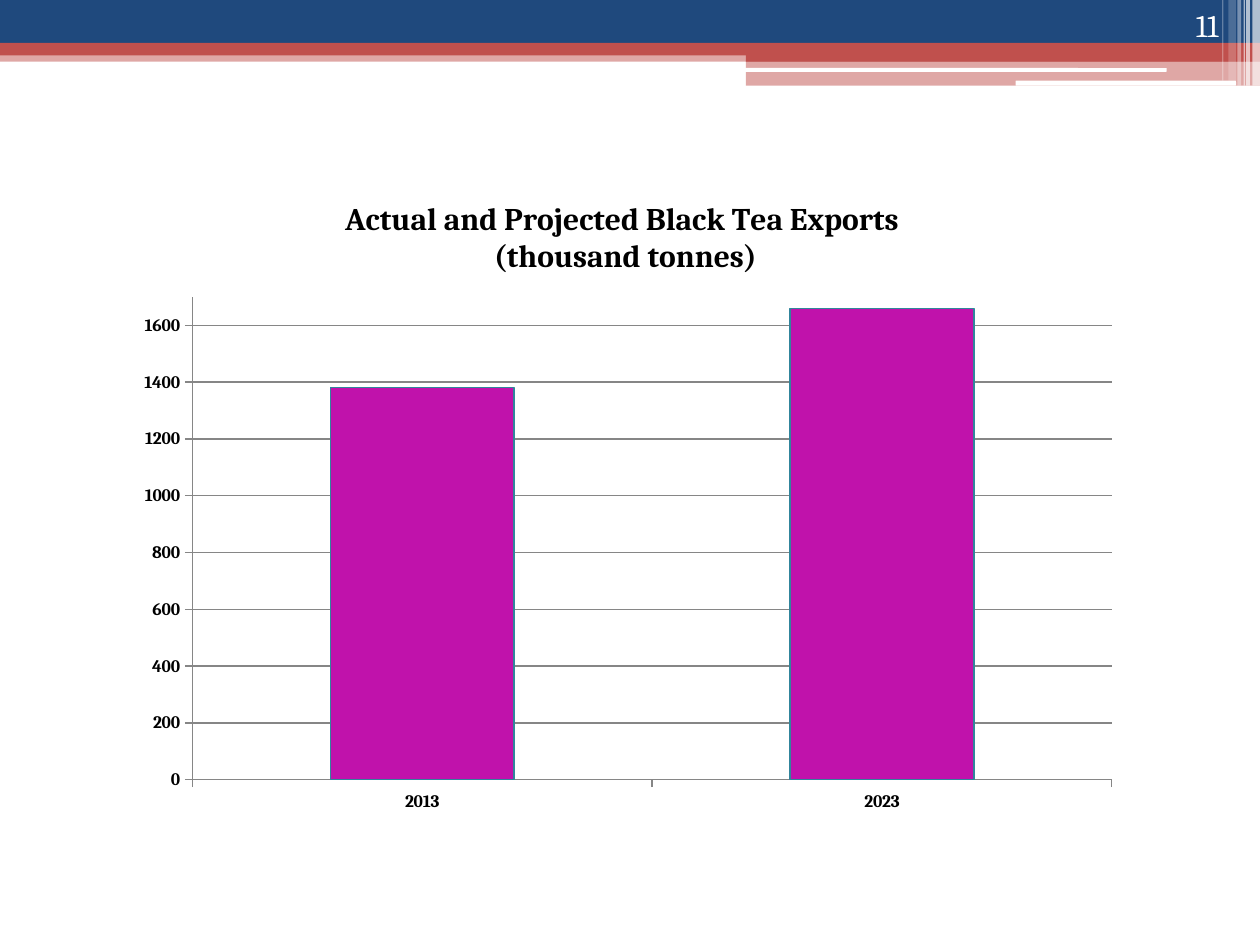
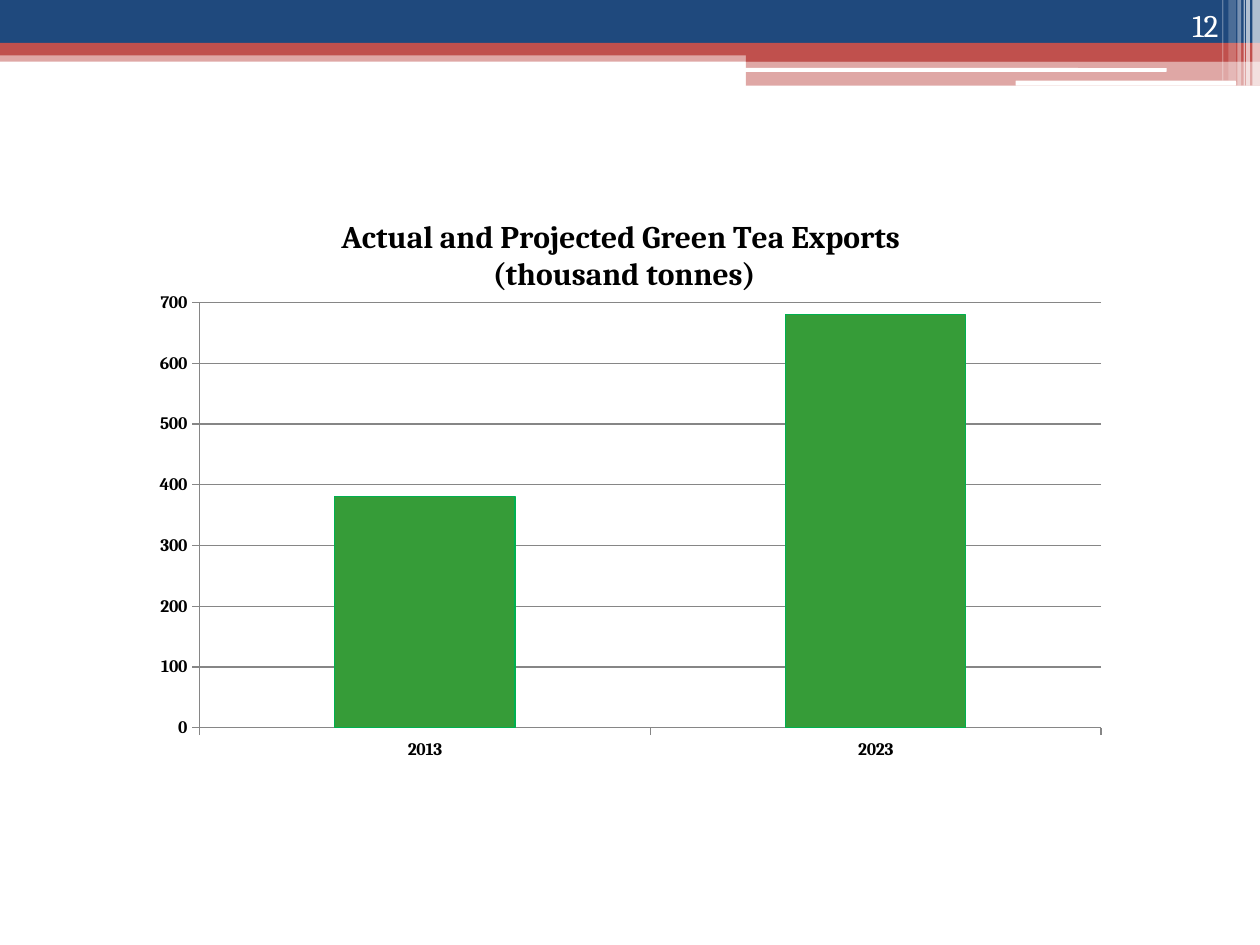
import pptx
import pptx.chart.data
import pptx.dml.color
import pptx.enum.chart
import pptx.enum.shapes
import pptx.enum.text
import pptx.oxml
import pptx.oxml.ns
import pptx.util
from dataclasses import dataclass

Inches = pptx.util.Inches
Pt = pptx.util.Pt


@dataclass(frozen=True)
class Theme:
    font: str = "Cambria"
    navy: str = "1F497D"
    red: str = "C0504D"
    white: str = "FFFFFF"
    black: str = "000000"
    grid: str = "868686"
    title_size: int = 18
    number_size: int = 18
    axis_size: int = 10


THEME = Theme()
RECT = pptx.enum.shapes.MSO_SHAPE.RECTANGLE
ROUNDED = pptx.enum.shapes.MSO_SHAPE.ROUNDED_RECTANGLE

# Header: preset, left, top, width, height, colour, opacity in percent
HEADER_BANDS = [
    (RECT, 0, 0.4, 10, 0.09, THEME.red, 50),
    (RECT, 0, 0, 10, 0.34, THEME.navy, 100),
    (RECT, 0, 0.34, 10, 0.1, THEME.red, 100),
    (RECT, 5.92, 0.39, 4.08, 0.1, THEME.red, 100),
    (RECT, 5.92, 0.48, 4.08, 0.2, THEME.red, 50),
    (ROUNDED, 5.91, 0.54, 3.35, 0.03, THEME.white, 100),
    (ROUNDED, 8.06, 0.64, 1.75, 0.04, THEME.white, 100),
]

# Light stripes at the right edge: left, width, height, opacity in percent
EDGE_STRIPES = [
    (9.94, 0.06, 0.68, 65),
    (9.89, 0.03, 0.68, 65),
    (9.87, 0.01, 0.68, 60),
    (9.82, 0.03, 0.68, 40),
    (9.75, 0.06, 0.64, 20),
    (9.7, 0.01, 0.64, 30),
]

# Plot area as fractions of the chart frame
PLOT_FRACTIONS = {"x": 0.076, "y": 0.183, "w": 0.9, "h": 0.726}


def rgb(colour):
    return pptx.dml.color.RGBColor.from_string(colour)


def style_font(font, size, colour, bold=False):
    font.name = THEME.font
    font.size = Pt(size)
    font.bold = bold
    font.color.rgb = rgb(colour)


def add_band(page, preset, left, top, width, height, colour, opacity):
    band = page.shapes.add_shape(
        preset, Inches(left), Inches(top), Inches(width), Inches(height))
    band.shadow.inherit = False
    band.fill.solid()
    band.fill.fore_color.rgb = rgb(colour)
    band.line.fill.background()
    if opacity < 100:
        colour_node = band.fill._xPr.find(".//" + pptx.oxml.ns.qn("a:srgbClr"))
        alpha = colour_node.makeelement(
            pptx.oxml.ns.qn("a:alpha"), {"val": str(opacity * 1000)})
        colour_node.append(alpha)
    return band


def move_header_to_layout(page, layout):
    """Draw the header once and let every page inherit it from the layout."""
    for placeholder in list(layout.placeholders):
        layout.shapes.element.remove(placeholder.element)
    bands = [add_band(page, *band) for band in HEADER_BANDS]
    bands += [add_band(page, RECT, left, 0, width, height, THEME.white, opacity)
              for left, width, height, opacity in EDGE_STRIPES]
    for band in bands:
        layout.shapes.element.append(band.element)


def add_page_number(page, number):
    box = page.shapes.add_textbox(
        Inches(8.94), Inches(0), Inches(0.83), Inches(0.4))
    frame = box.text_frame
    frame.word_wrap = True
    frame.vertical_anchor = pptx.enum.text.MSO_ANCHOR.BOTTOM
    frame.text = str(number)
    para = frame.paragraphs[0]
    para.alignment = pptx.enum.text.PP_ALIGN.RIGHT
    style_font(para.runs[0].font, THEME.number_size, THEME.white)


def set_plot_area(chart):
    """Fix the inner plot area inside the chart frame."""
    modes = "".join(f'<c:{name}Mode val="edge"/>' for name in "xy")
    sizes = "".join(f'<c:{name} val="{value}"/>'
                    for name, value in PLOT_FRACTIONS.items())
    layout = pptx.oxml.parse_xml(
        f'<c:layout {pptx.oxml.ns.nsdecls("c")}><c:manualLayout>'
        f'<c:layoutTarget val="inner"/>{modes}{sizes}'
        '</c:manualLayout></c:layout>')
    plot_area = chart.element.find(".//" + pptx.oxml.ns.qn("c:plotArea"))
    for previous in plot_area.findall(pptx.oxml.ns.qn("c:layout")):
        plot_area.remove(previous)
    plot_area.insert(0, layout)


def style_axis(axis):
    axis.major_tick_mark = pptx.enum.chart.XL_TICK_MARK.OUTSIDE
    axis.minor_tick_mark = pptx.enum.chart.XL_TICK_MARK.NONE
    axis.format.line.color.rgb = rgb(THEME.grid)
    axis.format.line.width = Pt(0.75)
    style_font(axis.tick_labels.font, THEME.axis_size, THEME.black, bold=True)


def add_export_chart(page, tea, frame, exports, maximum, step, fill, outline):
    data = pptx.chart.data.CategoryChartData()
    data.categories = ["2013", "2023"]
    data.add_series("Series 1", exports)
    chart = page.shapes.add_chart(
        pptx.enum.chart.XL_CHART_TYPE.COLUMN_STACKED,
        *(Inches(length) for length in frame), data).chart
    style_font(chart.font, THEME.axis_size, THEME.black)
    chart.has_legend = False

    # Title
    chart.has_title = True
    title = chart.chart_title
    title.include_in_layout = False
    title.text_frame.text = (
        f"Actual and Projected {tea} Tea Exports \n(thousand tonnes)")
    for para in title.text_frame.paragraphs:
        for span in para.runs:
            style_font(span.font, THEME.title_size, THEME.black, bold=True)

    # Axes
    style_axis(chart.category_axis)
    value_axis = chart.value_axis
    style_axis(value_axis)
    value_axis.minimum_scale = 0
    value_axis.maximum_scale = maximum
    value_axis.major_unit = step
    value_axis.has_major_gridlines = True
    gridline = value_axis.major_gridlines.format.line
    gridline.color.rgb = rgb(THEME.grid)
    gridline.width = Pt(0.75)

    # Columns
    plot = chart.plots[0]
    plot.vary_by_categories = False
    plot.gap_width = 150
    plot.overlap = 100
    columns = plot.series[0].format
    columns.fill.solid()
    columns.fill.fore_color.rgb = rgb(fill)
    columns.line.color.rgb = rgb(outline)
    columns.line.width = Pt(0.75)
    set_plot_area(chart)


def main():
    deck = pptx.Presentation()
    deck.slide_width = Inches(10)
    deck.slide_height = Inches(7.5)
    layout = deck.slide_layouts[6]

    black_page = deck.slides.add_slide(layout)
    move_header_to_layout(black_page, layout)
    add_page_number(black_page, 11)
    add_export_chart(black_page, "Black", (0.91, 1.39, 8.11, 5.28),
                     (1380, 1660), 1700, 200, "C012AB", "31859C")

    green_page = deck.slides.add_slide(layout)
    add_page_number(green_page, 12)
    add_export_chart(green_page, "Green", (0.98, 1.55, 7.95, 4.65),
                     (380, 680), 700, 100, "369C38", "00B050")

    deck.save("out.pptx")


if __name__ == "__main__":
    main()
